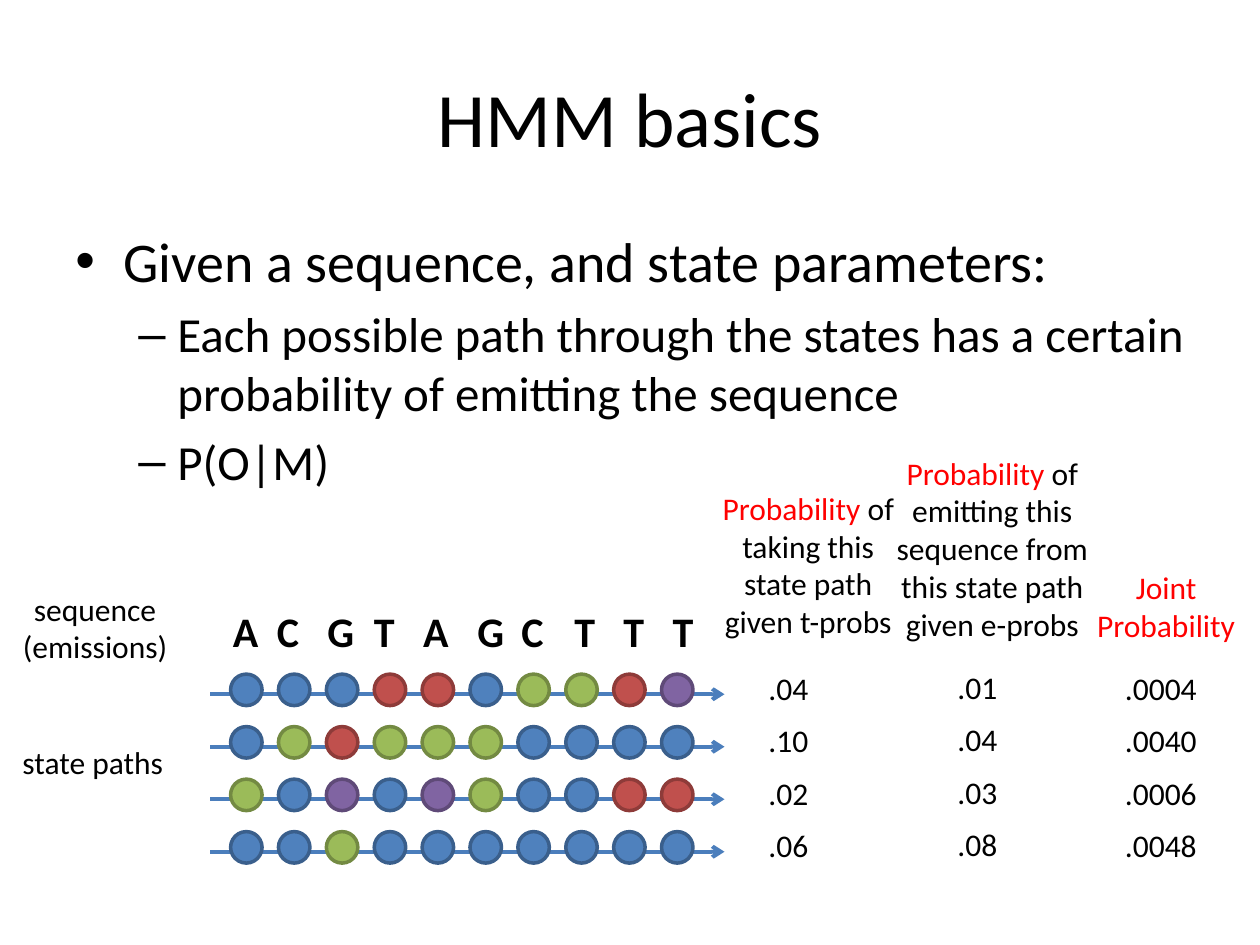
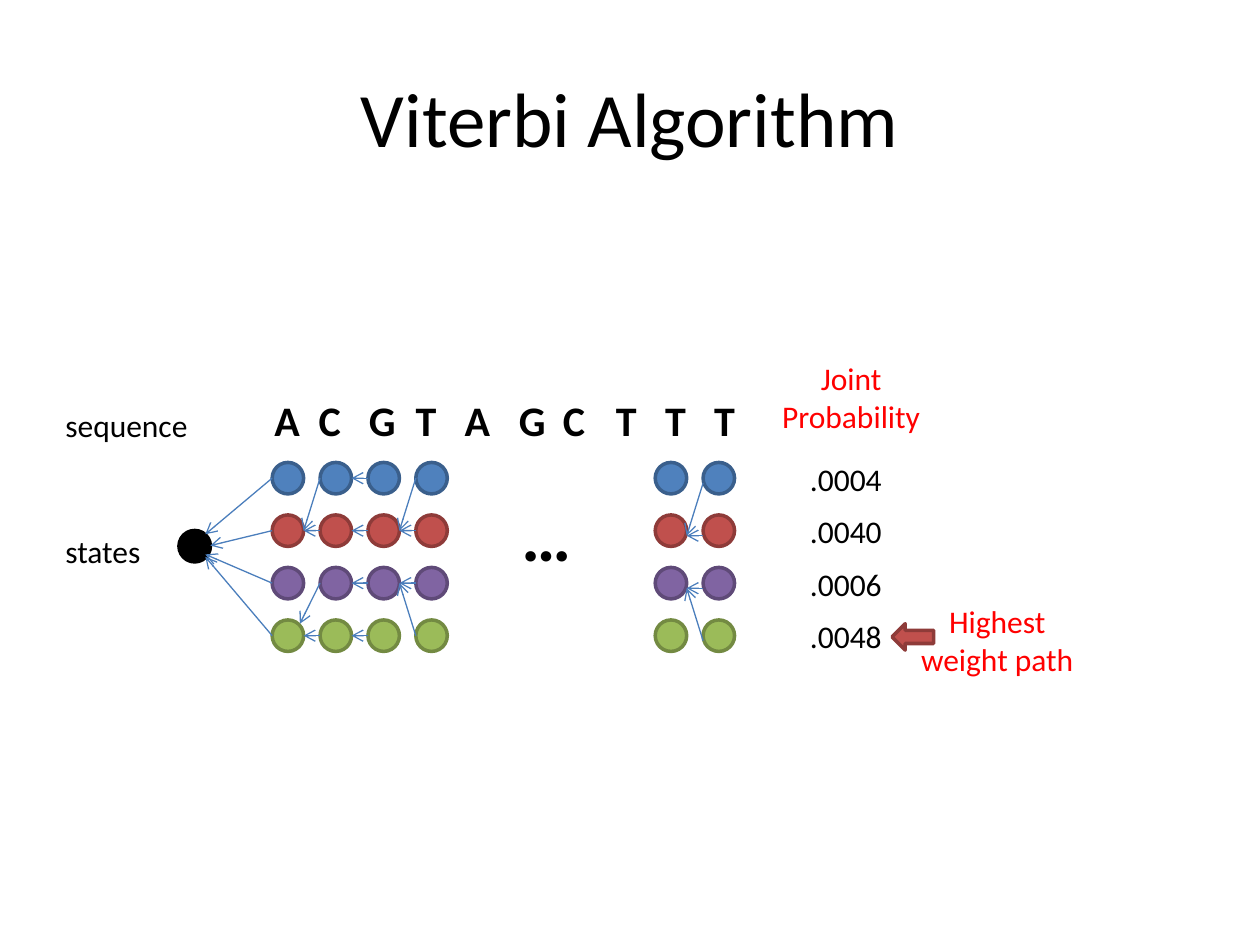
from lxml import etree
from pptx import Presentation
from pptx import util as u
from pptx.dml.color import RGBColor
from pptx.enum import shapes, text
from pptx.oxml import ns

FONT = "Calibri"
COLORS = {"black": "000000", "red": "FF0000", "link": "4B7EBC"}
STATES = {
    "B": ("4F81BD", "3A5F8C"),
    "R": ("C0504D", "8E3B39"),
    "P": ("8064A2", "5F4A78"),
    "G": ("9BBB59", "738A42"),
    "K": ("000000", "000000"),
}
SEQUENCE = "ACGTAGCTTT"
LETTER_STOPS = (0.35, 0.75, 1.12, 1.51, 1.94, 2.29, 2.71, 3.1, 3.49)
JOINT = (".0004", ".0040", ".0006", ".0048")
COL, ROW, DOT = 0.38, 1.25 / 3, 0.25
GRID_DX, GRID_DY = 0.08, 0.59


def rgb(name):
    """Return the colour for a name in the palette."""
    return RGBColor.from_string(COLORS[name])


def add_xml(parent, tag, **attrs):
    """Append a drawing element and return it."""
    return etree.SubElement(parent, ns.qn(tag), attrs)


def style_run(r, size, color="black", bold=False):
    """Set the font of a run."""
    r.font.name, r.font.size, r.font.bold = FONT, u.Pt(size), bold
    r.font.color.rgb = rgb(color)


def add_text(s, content, box, size=18, color="black", bold=False, center=False):
    """Add a text box; each paragraph is a string or a list of (text, colour) runs."""
    sp = s.shapes.add_textbox(*map(u.Inches, box))
    tf = sp.text_frame
    tf.word_wrap = True
    paragraphs = [content] if isinstance(content, str) else content
    for i, runs in enumerate(paragraphs):
        p = tf.paragraphs[0] if i == 0 else tf.add_paragraph()
        p.alignment = text.PP_ALIGN.CENTER if center else text.PP_ALIGN.LEFT
        for words, run_color in [(runs, color)] if isinstance(runs, str) else runs:
            r = p.add_run()
            r.text = words
            style_run(r, size, run_color, bold)
    return sp


def add_state(s, state, x, y, w=DOT, h=DOT, kind=shapes.MSO_SHAPE.OVAL):
    """Add a shape in the colours of a state."""
    sp = s.shapes.add_shape(kind, *map(u.Inches, (x, y, w, h)))
    sp.shadow.inherit = False
    fill, line = STATES[state]
    sp.fill.solid()
    sp.fill.fore_color.rgb = RGBColor.from_string(fill)
    sp.line.color.rgb = RGBColor.from_string(line)
    sp.line.width = u.Pt(2)


def add_arrow(s, start, end, width=0.75):
    """Add a straight arrow between two points."""
    cx = s.shapes.add_connector(
        shapes.MSO_CONNECTOR.STRAIGHT, *map(u.Inches, (*start, *end)))
    cx.line.color.rgb = rgb("link")
    cx.line.width = u.Pt(width)
    add_xml(cx.line._get_or_add_ln(), "a:tailEnd", type="arrow")
    add_xml(cx._element.spPr, "a:effectLst")


def add_titled_slide(prs, title):
    """Add a title-only slide with the shared title style."""
    s = prs.slides.add_slide(prs.slide_layouts[5])
    sp = s.shapes.title
    sp.left, sp.top, sp.width, sp.height = map(u.Inches, (0.5, 0.3, 9, 1.25))
    sp.text_frame.vertical_anchor = text.MSO_ANCHOR.MIDDLE
    p = sp.text_frame.paragraphs[0]
    p.alignment = text.PP_ALIGN.CENTER
    r = p.add_run()
    r.text = title
    style_run(r, 44)
    return s


def add_bullets(s, items, box):
    """Add a bulleted list of (level, text) items."""
    sp = add_text(s, [words for _, words in items], box)
    levels = ((32, 0.38, -0.38, "•"), (28, 0.81, -0.31, "–"))
    for p, (level, _) in zip(sp.text_frame.paragraphs, items):
        size, margin, indent, mark = levels[level]
        p.level = level
        p.space_before = u.Pt(size * 0.2)
        p.runs[0].font.size = u.Pt(size)
        pPr = p._p.get_or_add_pPr()
        pPr.set("marL", str(u.Inches(margin)))
        pPr.set("indent", str(u.Inches(indent)))
        add_xml(pPr, "a:buFont", typeface="Arial")
        add_xml(pPr, "a:buChar", char=mark)


def add_sequence(s, x, y):
    """Add the row of emitted letters, set on tab stops."""
    sp = add_text(s, "\t".join(SEQUENCE), (x, y, 4.5, 0.5), size=24, bold=True)
    tabs = add_xml(sp.text_frame.paragraphs[0]._p.get_or_add_pPr(), "a:tabLst")
    for stop in LETTER_STOPS:
        add_xml(tabs, "a:tab", pos=str(u.Inches(stop)), algn="l")


def add_values(s, values, x, y):
    """Add a column of probabilities, one per row of the grid."""
    for i, value in enumerate(values):
        add_text(s, value, (x, y + i * ROW, 0.92, 0.4))


def add_joint_column(s, x, y):
    """Add the joint probabilities under their heading."""
    add_text(s, "Joint Probability", (x - 0.41, y - 0.8, 1.67, 0.71),
             color="red", center=True)
    add_values(s, JOINT, x, y)


def add_state_paths(s, x, y):
    """Add the sequence and four coloured state paths on arrows."""
    paths = ("BBBRRBGGRP", "BGRGGGBBBB", "GBPBPGBBRR", "BBGBBBBBBB")
    for i, states in enumerate(paths):
        line_y = y + 0.75 + i * ROW
        add_arrow(s, (x - 0.08, line_y), (x + 4, line_y), 2.25)
        for j, state in enumerate(states):
            add_state(s, state, x + GRID_DX + j * COL, y + GRID_DY + i * ROW)
    add_sequence(s, x, y)


def add_trellis(s, x, y):
    """Add the sequence and the grid of states with links back to the start."""
    add_sequence(s, x, y)
    gx, gy = x + GRID_DX, y + GRID_DY

    def left(col, row, dy=0):
        """Return the left middle of a state."""
        return gx + col * COL, gy + DOT / 2 + row * ROW + dy

    def right(col, row, dy=0):
        """Return the right middle of a state."""
        px, py = left(col, row, dy)
        return px + DOT, py

    for col in (0, 1, 2, 3, 8, 9):
        for row, state in enumerate("BRPG"):
            add_state(s, state, gx + col * COL, gy + row * ROW)
    add_state(s, "K", x - 0.66, y + 1.13)
    starts = ((-0.45, 1.16), (-0.41, 1.25), (-0.45, 1.32), (-0.45, 1.34))
    for row, (dx, dy) in enumerate(starts):
        add_arrow(s, left(0, row), (x + dx, y + dy))
    merging = ((0, 1), (1, 1), (2, 2), (3, 2))
    links = (
        (0, ((0, 1), (1, 1), (3, 3)), 0),
        (1, ((0, 0), (1, 1), (2, 2), (3, 3)), 0),
        (2, merging, 0),
        (8, merging, 0.04),
    )
    for col, pairs, dy in links:
        for row, back in pairs:
            add_arrow(s, left(col + 1, row, dy), right(col, back, dy))
    add_arrow(s, left(1, 2), (x + 0.3, y + 1.87))
    add_text(s, "…", (x + 1.67, y + 0.77, 1.17, 0.77), size=40, bold=True, center=True)


def build_basics(prs):
    """Build the slide on the probabilities of state paths."""
    s = add_titled_slide(prs, "HMM basics")
    add_bullets(s, (
        (0, "Given a sequence, and state parameters:"),
        (1, "Each possible path through the states has a certain "
            "probability of emitting the sequence"),
        (1, "P(O|M)"),
    ), (0.5, 1.75, 9, 4.95))
    add_state_paths(s, 1.75, 4.76)
    add_text(s, ["sequence", "(emissions)"], (-0.08, 4.63, 1.67, 0.71), center=True)
    add_text(s, "state paths", (0.08, 5.85, 1.33, 0.4))
    headings = (
        (" of taking this state path given t-probs", (5.58, 3.83, 1.67, 1.31)),
        (" of emitting this sequence from this state path given e-probs",
         (7, 3.55, 1.75, 1.62)),
    )
    for words, box in headings:
        add_text(s, [[("Probability", "red"), (words, "black")]], box, center=True)
    add_values(s, (".04", ".10", ".02", ".06"), 6, 5.26)
    add_values(s, (".01", ".04", ".03", ".08"), 7.5, 5.25)
    add_joint_column(s, 8.83, 5.26)


def build_viterbi(prs):
    """Build the slide on the Viterbi trellis."""
    s = add_titled_slide(prs, "Viterbi Algorithm")
    add_text(s, "sequence", (0.42, 3.17, 1.33, 0.4))
    add_text(s, "states", (0.42, 4.17, 1.33, 0.4))
    add_trellis(s, 2.08, 3.08)
    add_joint_column(s, 6.33, 3.6)
    add_text(s, "Highest weight path", (7.08, 4.73, 1.67, 0.71),
             color="red", center=True)
    add_state(s, "R", 7.08, 4.95, 0.33, 0.21, shapes.MSO_SHAPE.LEFT_ARROW)


def main():
    """Build and save the presentation."""
    prs = Presentation()
    prs.slide_width, prs.slide_height = u.Inches(10), u.Inches(7.5)
    build_basics(prs)
    build_viterbi(prs)
    prs.save("out.pptx")


if __name__ == "__main__":
    main()
